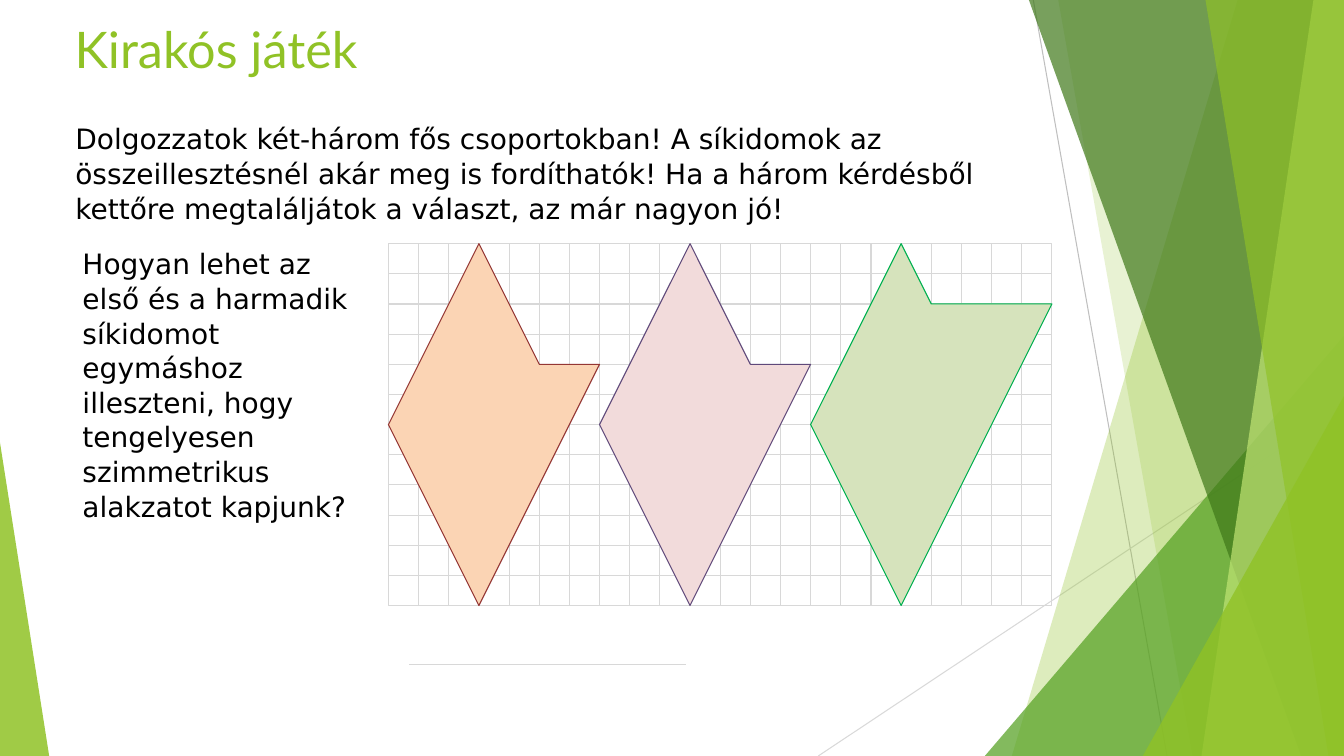
"""Build the "Kirakós játék" puzzle slide: three figures on a square grid."""
import dataclasses

import lxml.etree
import pptx
import pptx.dml.color
import pptx.enum.shapes
import pptx.oxml.ns
import pptx.util

Cm = pptx.util.Cm
Pt = pptx.util.Pt
RGBColor = pptx.dml.color.RGBColor
MSO_SHAPE = pptx.enum.shapes.MSO_SHAPE
Point = tuple[float, float]

LIME = RGBColor(0x90, 0xC2, 0x26)
GREEN = RGBColor(0x54, 0xA0, 0x21)
FOREST = RGBColor(0x3F, 0x78, 0x19)
PALE_LIME = RGBColor(0xC0, 0xE4, 0x74)
GRID_GREY = RGBColor(0xD8, 0xD8, 0xD8)
RAY_GREY = RGBColor(0xBF, 0xBF, 0xBF)
PALE_RAY_GREY = RGBColor(0xD9, 0xD9, 0xD9)
BLACK = RGBColor(0x00, 0x00, 0x00)
PEACH = RGBColor(0xFB, 0xD4, 0xB4)
MAROON = RGBColor(0x94, 0x36, 0x34)
PINK = RGBColor(0xF2, 0xDB, 0xDB)
PURPLE = RGBColor(0x5F, 0x49, 0x7A)
SAGE = RGBColor(0xD6, 0xE3, 0xBC)
EMERALD = RGBColor(0x00, 0xB0, 0x50)

WIDTH, HEIGHT = 33.87, 19.05
GRID_LEFT, GRID_TOP, CELL = 9.79, 6.14, 0.76
COLUMNS, ROWS = 22, 12
LINE_WIDTH = 0.75


@dataclasses.dataclass(frozen=True)
class Band:
    """A translucent band reaching from a slanted edge to the right side."""

    top_x: float
    bottom_x: float
    color: RGBColor
    opacity: int


@dataclasses.dataclass(frozen=True)
class Wedge:
    """A translucent right triangle standing on the bottom edge."""

    left: float
    top: float
    width: float
    apex: float
    color: RGBColor
    opacity: int


@dataclasses.dataclass(frozen=True)
class Figure:
    """A puzzle figure whose corners are counted in grid cells."""

    column: int
    corners: tuple[Point, ...]
    fill: RGBColor
    outline: RGBColor


BACKDROP = (
    Band(31.19, 25.5, LIME, 30),
    Band(26.67, 30.05, LIME, 20),
    Wedge(24.82, 8.46, 9.05, 1, GREEN, 72),
    Band(25.93, 32.79, FOREST, 70),
    Band(33.1, 30.28, PALE_LIME, 70),
    Band(30.38, 33.48, LIME, 65),
    Wedge(28.8, 9.98, 5.07, 1, LIME, 80),
    Wedge(0, 11.15, 1.24, 0, LIME, 85),
)
SHORT_NOTCH = ((3, 0), (0, 6), (3, 12), (7, 4), (5, 4))
LONG_NOTCH = ((3, 0), (0, 6), (3, 12), (8, 2), (4, 2))
FIGURES = (
    Figure(14, LONG_NOTCH, SAGE, EMERALD),
    Figure(7, SHORT_NOTCH, PINK, PURPLE),
    Figure(0, SHORT_NOTCH, PEACH, MAROON),
)


def add_line(slide, start: Point, end: Point, color: RGBColor) -> None:
    """Draw a thin straight line without shadow."""
    line = slide.shapes.add_connector(
        pptx.enum.shapes.MSO_CONNECTOR.STRAIGHT, *map(Cm, start + end)
    )
    line.line.color.rgb = color
    line.line.width = Pt(LINE_WIDTH)
    lxml.etree.SubElement(line._element.spPr, pptx.oxml.ns.qn("a:effectLst"))


def add_polygon(slide, corners: list[Point]):
    """Return a closed outline through the corners."""
    points = [(Cm(x), Cm(y)) for x, y in corners]
    builder = slide.shapes.build_freeform(*points[0])
    builder.add_line_segments(points[1:], close=True)
    return builder.convert_to_shape()


def style(shape, fill: RGBColor | None, outline: RGBColor | None, opacity: int = 100) -> None:
    """Set fill, outline and opacity, and remove the shadow."""
    shape.shadow.inherit = False
    if fill is None:
        shape.fill.background()
    else:
        shape.fill.solid()
        shape.fill.fore_color.rgb = fill
    if opacity < 100:
        color = shape._element.spPr.find(".//" + pptx.oxml.ns.qn("a:srgbClr"))
        alpha = lxml.etree.SubElement(color, pptx.oxml.ns.qn("a:alpha"))
        alpha.set("val", str(opacity * 1000))
    if outline is None:
        shape.line.fill.background()
    else:
        shape.line.color.rgb = outline
        shape.line.width = Pt(LINE_WIDTH)


def add_text(slide, text: str, *, left: float, top: float, width: float, height: float,
             size: float = 20, font: str = "DejaVu Sans", color: RGBColor = BLACK,
             spacing: float = 1.03) -> None:
    """Add a wrapped text box with one paragraph per line of text."""
    box = slide.shapes.add_textbox(*map(Cm, (left, top, width, height)))
    box.text_frame.word_wrap = True
    box.text_frame.text = text
    for para in box.text_frame.paragraphs:
        para.line_spacing = spacing
        for span in para.runs:
            span.font.size = Pt(size)
            span.font.name = font
            span.font.color.rgb = color


def add_backdrop(slide) -> None:
    """Draw the green facets and the two thin rays."""
    add_line(slide, (26.04, 0), (29.41, HEIGHT), RAY_GREY)
    add_line(slide, (WIDTH, 10.24), (20.62, HEIGHT), PALE_RAY_GREY)
    for part in BACKDROP:
        if isinstance(part, Band):
            shape = add_polygon(slide, [
                (part.top_x, 0), (WIDTH, 0), (WIDTH, HEIGHT), (part.bottom_x, HEIGHT)
            ])
        else:
            shape = slide.shapes.add_shape(
                MSO_SHAPE.ISOSCELES_TRIANGLE,
                *map(Cm, (part.left, part.top, part.width, HEIGHT - part.top)),
            )
            shape.adjustments[0] = part.apex
        style(shape, part.color, None, part.opacity)


def add_puzzle(slide) -> None:
    """Draw the square grid and the three figures on it."""
    right, bottom = GRID_LEFT + COLUMNS * CELL, GRID_TOP + ROWS * CELL
    frame = slide.shapes.add_shape(
        MSO_SHAPE.RECTANGLE,
        *map(Cm, (GRID_LEFT, GRID_TOP, COLUMNS * CELL, ROWS * CELL)),
    )
    style(frame, None, GRID_GREY)
    for column in range(1, COLUMNS):
        x = GRID_LEFT + column * CELL
        add_line(slide, (x, GRID_TOP), (x, bottom), GRID_GREY)
    for row in range(1, ROWS):
        y = GRID_TOP + row * CELL
        add_line(slide, (GRID_LEFT, y), (right, y), GRID_GREY)
    for figure in FIGURES:
        shape = add_polygon(slide, [
            (GRID_LEFT + (figure.column + x) * CELL, GRID_TOP + y * CELL)
            for x, y in figure.corners
        ])
        style(shape, figure.fill, figure.outline)


def main() -> None:
    """Assemble and save the deck."""
    deck = pptx.Presentation()
    deck.slide_width, deck.slide_height = Cm(WIDTH), Cm(HEIGHT)
    page = deck.slides.add_slide(deck.slide_layouts[6])
    add_backdrop(page)
    add_text(page, "Kirakós játék", left=1.63, top=0.33, width=15.03, height=2.31,
             size=36, font="Lato", color=LIME, spacing=1)
    add_text(page, "Dolgozzatok két-három fős csoportokban! A síkidomok az "
             "összeillesztésnél akár meg is fordíthatók! Ha a három kérdésből "
             "kettőre megtaláljátok a választ, az már nagyon jó!",
             left=1.65, top=2.92, width=24.49, height=4.45)
    add_line(page, (10.31, 16.74), (17.3, 16.74), GRID_GREY)
    add_puzzle(page)
    add_text(page, "Hogyan lehet az első és a harmadik síkidomot egymáshoz "
             "illeszteni, hogy\ntengelyesen szimmetrikus alakzatot kapjunk?",
             left=1.83, top=6.07, width=7.42, height=7.87)
    deck.save("out.pptx")


if __name__ == "__main__":
    main()
